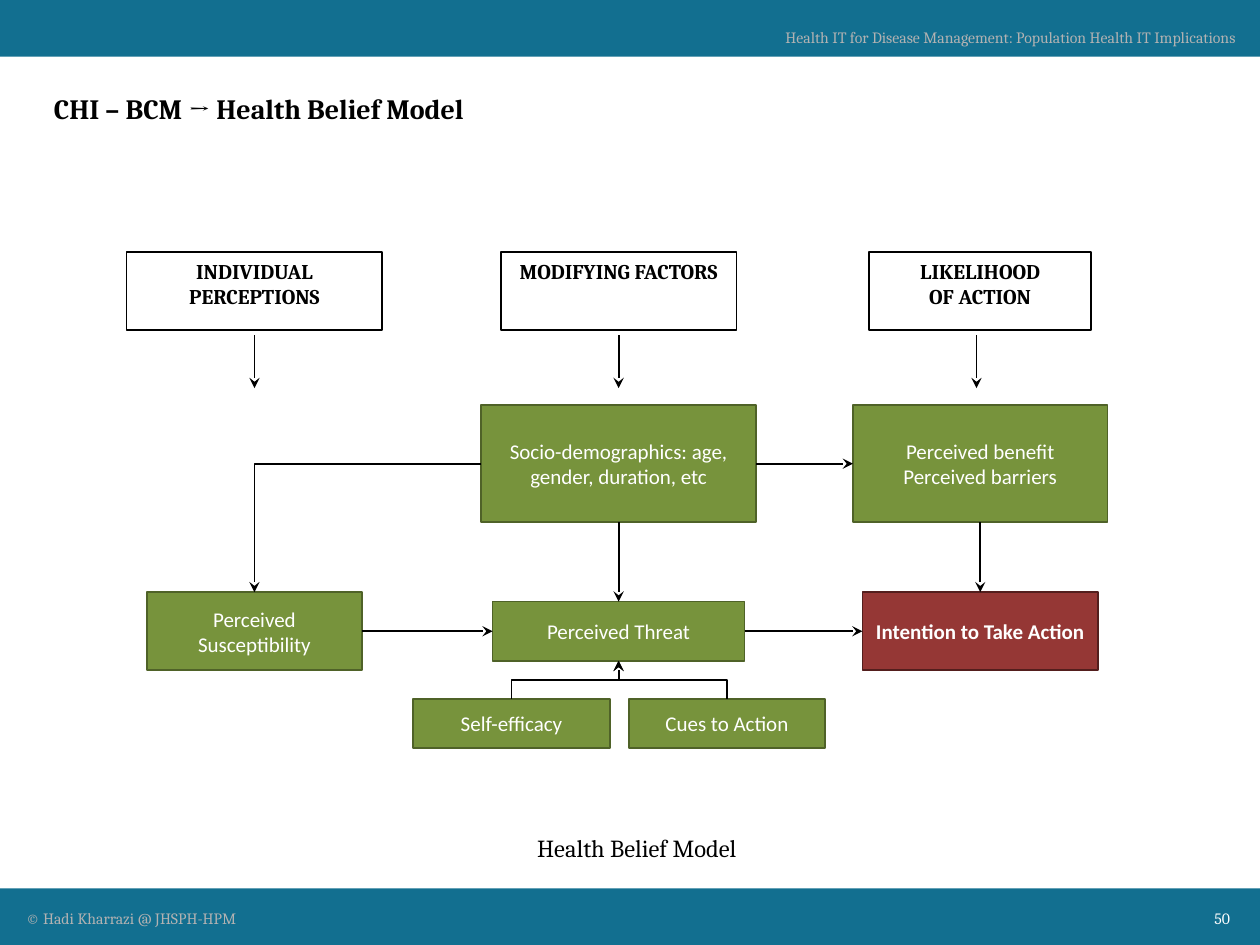
from lxml import etree
from pptx import Presentation
from pptx.dml.color import RGBColor
from pptx.enum import shapes, text
from pptx.oxml.ns import qn
from pptx.util import Inches, Pt

COLORS = {"teal": "126F90", "grey": "B2B2B2", "white": "FFFFFF", "black": "000000",
          "green": "77933C", "dark_green": "4F6228", "red": "953735", "dark_red": "531E1D"}

# style: fill, line, text format
STYLES = {
    "header": ("white", "black", dict(font="Cambria", color="black", bold=True)),
    "factor": ("green", "dark_green", dict(font="Calibri", color="white", anchor="MIDDLE")),
    "outcome": ("red", "dark_red",
                dict(font="Calibri", color="white", bold=True, anchor="MIDDLE")),
}

# name: style, lines, (centre x, centre y, width, height)
LEFT, MIDDLE, RIGHT = 2.02, 4.91, 7.78
BOXES = {
    "perceptions": ("header", ["INDIVIDUAL", "PERCEPTIONS"], (LEFT, 2.31, 2.03, 0.62)),
    "modifying": ("header", ["MODIFYING FACTORS"], (MIDDLE, 2.31, 1.87, 0.62)),
    "likelihood": ("header", ["LIKELIHOOD", "OF ACTION"], (RIGHT, 2.31, 1.76, 0.62)),
    "demographics": ("factor", ["Socio-demographics: age, gender, duration, etc"],
                     (MIDDLE, 3.68, 2.18, 0.93)),
    "benefit": ("factor", ["Perceived benefit", "Perceived barriers"],
                (RIGHT, 3.68, 2.02, 0.93)),
    "susceptibility": ("factor", ["Perceived Susceptibility"], (LEFT, 5.01, 1.71, 0.62)),
    "threat": ("factor", ["Perceived Threat"], (MIDDLE, 5.01, 2, 0.47)),
    "intention": ("outcome", ["Intention to Take Action"], (RIGHT, 5.01, 1.87, 0.62)),
    "efficacy": ("factor", ["Self-efficacy"], (4.06, 5.74, 1.56, 0.39)),
    "cues": ("factor", ["Cues to Action"], (5.77, 5.74, 1.56, 0.39)),
}

# from box, side, to box, side, route
ARROWS = [
    ("demographics", "left", "susceptibility", "top", "corner"),
    ("susceptibility", "right", "threat", "left", "straight"),
    ("threat", "right", "intention", "left", "straight"),
    ("benefit", "bottom", "intention", "top", "straight"),
    ("demographics", "bottom", "threat", "top", "straight"),
    ("efficacy", "top", "threat", "bottom", "step"),
    ("cues", "top", "threat", "bottom", "step"),
    ("demographics", "right", "benefit", "left", "straight"),
]
HEADER_ARROWS = [(LEFT, 2.66, 3.08), (MIDDLE, 2.66, 3.08), (7.75, 2.66, 3.08)]

SIDES = {"left": (-0.5, 0), "right": (0.5, 0), "top": (0, -0.5), "bottom": (0, 0.5)}

# text, (left, top, width, height), format
LABELS = [
    (["© Hadi Kharrazi @ JHSPH-HPM"], (0.11, 7.16, 6.21, 0.25), dict(size=9, color="grey")),
    (["Health IT for Disease Management: Population Health IT Implications"],
     (5.74, 0.17, 4.16, 0.25), dict(size=9, color="grey", align="RIGHT")),
    (["Health Belief Model"], (4.09, 6.56, 1.93, 0.34),
     dict(size=14, align="CENTER", wrap=False)),
    (["CHI – BCM → Health Belief Model"], (0.33, 0.66, 9.33, 0.4),
     dict(size=16, bold=True, anchor="MIDDLE")),
    (["50"], (9.21, 7.16, 0.65, 0.25), dict(size=9, color="white", align="RIGHT")),
]


def rgb(name):
    return RGBColor.from_string(COLORS[name])


def write(sp, lines, size=12, font="Cambria", color="black", bold=False,
          align="LEFT", anchor="TOP", wrap=True):
    tf = sp.text_frame
    tf.word_wrap = wrap
    tf.vertical_anchor = text.MSO_ANCHOR[anchor]
    for i, line in enumerate(lines):
        p = tf.add_paragraph() if i else tf.paragraphs[0]
        p.alignment = text.PP_ALIGN[align]
        r = p.add_run()
        r.text = line
        r.font.size, r.font.name, r.font.bold = Pt(size), font, bold
        r.font.color.rgb = rgb(color)


def add_rect(s, left, top, width, height, fill, line=None):
    sp = s.shapes.add_shape(shapes.MSO_SHAPE.RECTANGLE, Inches(left), Inches(top),
                            Inches(width), Inches(height))
    sp.shadow.inherit = False
    sp.fill.solid()
    sp.fill.fore_color.rgb = rgb(fill)
    if line:
        sp.line.color.rgb = rgb(line)
        sp.line.width = Pt(1)
    else:
        sp.line.fill.background()
    return sp


def add_arrow(s, start, end, route="straight"):
    """Route is straight, corner (across, then down) or step (up, across, up)."""
    (x1, y1), (x2, y2) = start, end
    if route == "step":  # the preset runs across first, so lay it out a quarter turn back
        cx, cy = (x1 + x2) / 2, (y1 + y2) / 2
        dx, dy = (x2 - x1) / 2, (y2 - y1) / 2
        x1, y1, x2, y2 = cx - dy, cy + dx, cx + dy, cy - dx
    kind = shapes.MSO_CONNECTOR.STRAIGHT if route == "straight" else shapes.MSO_CONNECTOR.ELBOW
    line = s.shapes.add_connector(kind, Inches(x1), Inches(y1), Inches(x2), Inches(y2))
    line.line.color.rgb = rgb("black")
    line.line.width = Pt(1)
    sppr = line._element.spPr
    if route == "step":
        sppr.find(qn("a:xfrm")).set("rot", str(90 * 60000))
    elif route == "corner":
        sppr.find(qn("a:prstGeom")).set("prst", "bentConnector2")
    etree.SubElement(sppr.find(qn("a:ln")), qn("a:tailEnd"), type="stealth")
    etree.SubElement(sppr, qn("a:effectLst"))


def side_point(name, side):
    x, y, width, height = BOXES[name][2]
    fx, fy = SIDES[side]
    return x + fx * width, y + fy * height


def main():
    prs = Presentation()
    prs.slide_width, prs.slide_height = Inches(10), Inches(7.5)
    s = prs.slides.add_slide(prs.slide_layouts[6])

    for top in (0, 7.05):
        add_rect(s, 0, top, 10, 0.45, "teal")

    for style, lines, (x, y, width, height) in BOXES.values():
        fill, line, fmt = STYLES[style]
        sp = add_rect(s, x - width / 2, y - height / 2, width, height, fill, line)
        write(sp, lines, align="CENTER", **fmt)

    for source, out_side, target, in_side, route in ARROWS:
        add_arrow(s, side_point(source, out_side), side_point(target, in_side), route)
    for x, top, bottom in HEADER_ARROWS:
        add_arrow(s, (x, top), (x, bottom))

    for lines, box, fmt in LABELS:
        write(s.shapes.add_textbox(*map(Inches, box)), lines, **fmt)

    prs.save("out.pptx")


if __name__ == "__main__":
    main()
